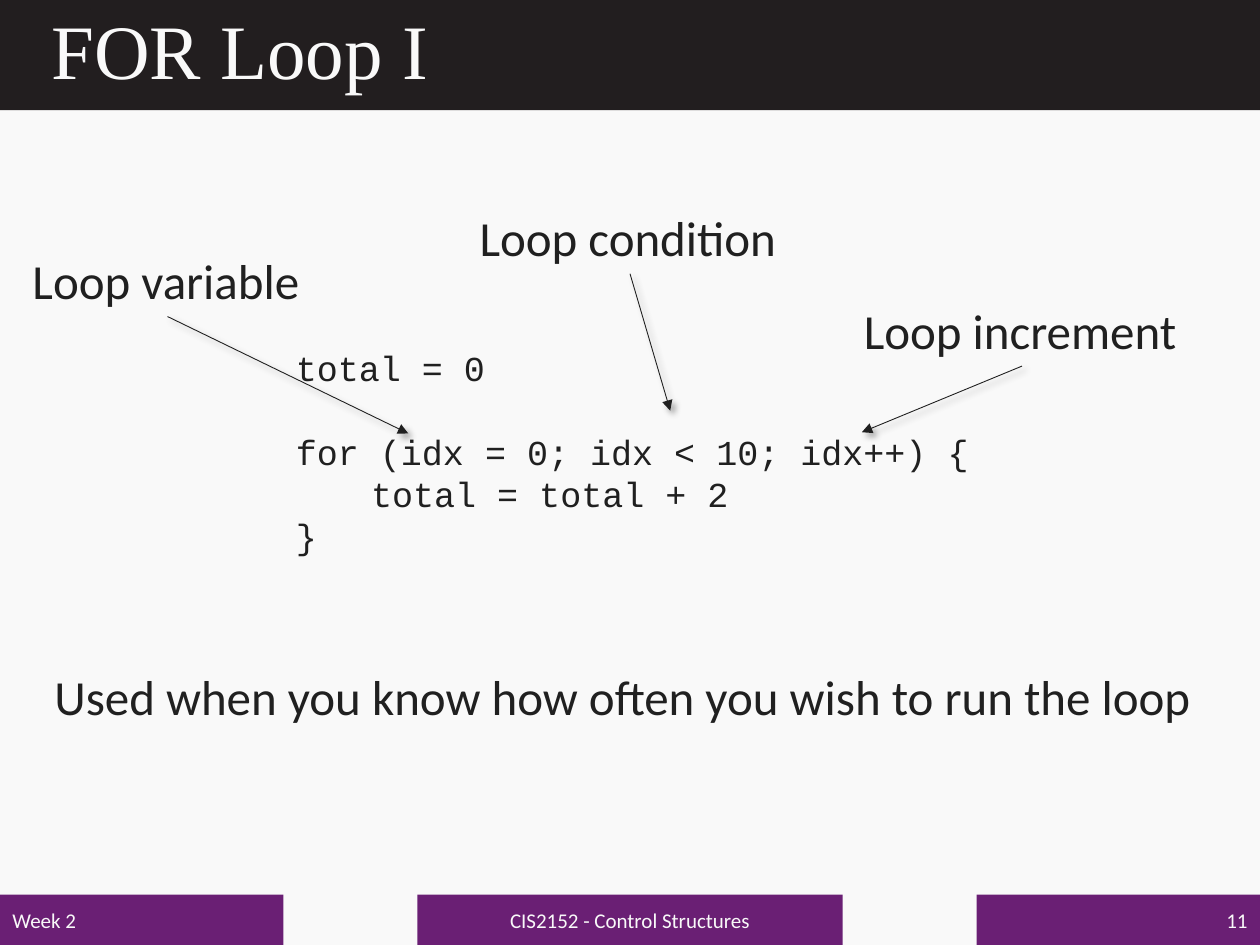
"""Builds the FOR loop slide, with its annotated code sample."""
from dataclasses import dataclass

from lxml import etree
from pptx import Presentation
from pptx.dml.color import RGBColor
from pptx.enum.shapes import MSO_CONNECTOR, MSO_SHAPE
from pptx.enum.text import MSO_ANCHOR, MSO_AUTO_SIZE, PP_ALIGN
from pptx.oxml import parse_xml
from pptx.oxml.ns import qn
from pptx.util import Pt

RECT = MSO_SHAPE.RECTANGLE
STRAIGHT = MSO_CONNECTOR.STRAIGHT
TOP, MIDDLE = MSO_ANCHOR.TOP, MSO_ANCHOR.MIDDLE
LEFT, CENTER, RIGHT = PP_ALIGN.LEFT, PP_ALIGN.CENTER, PP_ALIGN.RIGHT
FIT = MSO_AUTO_SIZE.SHAPE_TO_FIT_TEXT
BOTTOM_SITE = 2
SHADOW = (
    '<a:effectLst xmlns:a="http://schemas.openxmlformats.org/drawingml/2006/main">'
    '<a:outerShdw blurRad="{blur}" dist="{dist}" dir="2700000" algn="tl" rotWithShape="0">'
    '<a:srgbClr val="000000"><a:alpha val="40000"/></a:srgbClr>'
    '</a:outerShdw></a:effectLst>'
)


@dataclass(frozen=True)
class Theme:
    paper: str = "F9F9F9"
    ink: str = "202020"
    bar: str = "221E1F"
    accent: str = "6A1F74"
    title_font: str = "Times New Roman"
    body_font: str = "Calibri"
    code_font: str = "Courier New"
    title_size: int = 44
    body_size: int = 28
    code_size: int = 20
    footer_size: int = 12
    code_pitch: int = 24
    code_indent: int = 43


class Deck:
    """Holds the theme and the current slide."""

    def __init__(self, prs, theme):
        self.theme = theme
        self.s = prs.slides.add_slide(prs.slide_layouts[6])
        fill = self.s.background.fill
        fill.solid()
        fill.fore_color.rgb = RGBColor.from_string(theme.paper)

    def run(self, p, text, font, size, color):
        """Add one styled run to a paragraph."""
        r = p.add_run()
        r.text = text
        r.font.name = font
        r.font.size = Pt(size)
        r.font.color.rgb = RGBColor.from_string(color)

    def rect(self, x, y, w, h, color):
        """Add a plain filled rectangle."""
        sp = self.s.shapes.add_shape(RECT, Pt(x), Pt(y), Pt(w), Pt(h))
        sp.shadow.inherit = False
        sp.fill.solid()
        sp.fill.fore_color.rgb = RGBColor.from_string(color)
        sp.line.fill.background()
        return sp

    def box(self, x, y, w, h, wrap=True):
        """Add an empty text box."""
        sp = self.s.shapes.add_textbox(Pt(x), Pt(y), Pt(w), Pt(h))
        sp.text_frame.word_wrap = wrap
        return sp

    def title(self, text):
        """Add the dark band and its title."""
        t = self.theme
        self.rect(0, 0, 720, 63, t.bar)
        tf = self.box(22.3, 0, 676, 62).text_frame
        tf.vertical_anchor = MIDDLE
        p = tf.paragraphs[0]
        p.line_spacing = 0.9
        self.run(p, text, t.title_font, t.title_size, t.paper)

    def footer(self, x, w, text, align):
        """Add one footer block."""
        t = self.theme
        sp = self.rect(x, 511.2, w, 28.8, t.accent)
        tf = sp.text_frame
        tf.vertical_anchor = MIDDLE
        p = tf.paragraphs[0]
        p.alignment = align
        self.run(p, text, t.body_font, t.footer_size, t.paper)

    def label(self, x, y, w, text):
        """Add a one-line label."""
        t = self.theme
        sp = self.box(x, y, w, 41.2, wrap=False)
        tf = sp.text_frame
        tf.auto_size = FIT
        self.run(tf.paragraphs[0], text, t.body_font, t.body_size, t.ink)
        return sp

    def code(self, x, y, w, h, lines):
        """Add code lines given as (text, indent level, blank lines above)."""
        t = self.theme
        tf = self.box(x, y, w, h).text_frame
        tf.vertical_anchor = TOP
        for i, (text, level, gap) in enumerate(lines):
            p = tf.add_paragraph() if i else tf.paragraphs[0]
            p.line_spacing = Pt(t.code_pitch)
            p.space_before = Pt(gap * t.code_pitch)
            pPr = p._p.get_or_add_pPr()
            pPr.set("marL", str(Pt(level * t.code_indent)))
            pPr.set("indent", "0")
            self.run(p, text, t.code_font, t.code_size, t.ink)

    def arrow(self, source, x, y):
        """Draw a shadowed arrow from the bottom of a label to a point."""
        cx = self.s.shapes.add_connector(STRAIGHT, 0, 0, Pt(x), Pt(y))
        cx.begin_connect(source, BOTTOM_SITE)
        cx.line.width = Pt(0.5)
        cx.line.color.rgb = RGBColor.from_string(self.theme.ink)
        ln = cx.line._get_or_add_ln()
        etree.SubElement(ln, qn("a:tailEnd"), type="triangle")
        cx._element.spPr.append(parse_xml(SHADOW.format(blur=Pt(4), dist=Pt(3))))


def main():
    prs = Presentation()
    prs.slide_width, prs.slide_height = Pt(720), Pt(540)
    deck = Deck(prs, Theme())

    deck.title("FOR Loop I")
    for x, w, text, align in (
        (0, 162, "Week 2", LEFT),
        (238.5, 243, "CIS2152 - Control Structures", CENTER),
        (558, 162, "11", RIGHT),
    ):
        deck.footer(x, w, text, align)

    deck.code(162, 194.4, 416, 128, (
        ("total = 0", 0, 0),
        ("for (idx = 0; idx < 10; idx++) {", 0, 1),
        ("total = total + 2", 1, 0),
        ("}", 0, 0),
    ))

    for x, y, w, text, tip in (
        (11.5, 139.7, 168.5, "Loop variable", (233.3, 247.7)),
        (267, 115.2, 186, "Loop condition", (383, 234.7)),
        (486.5, 168, 195, "Loop increment", (492.5, 247)),
    ):
        deck.arrow(deck.label(x, y, w, text), *tip)

    deck.label(24, 377.3, 672, "Used when you know how often you wish to run the loop")
    prs.save("out.pptx")


if __name__ == "__main__":
    main()
